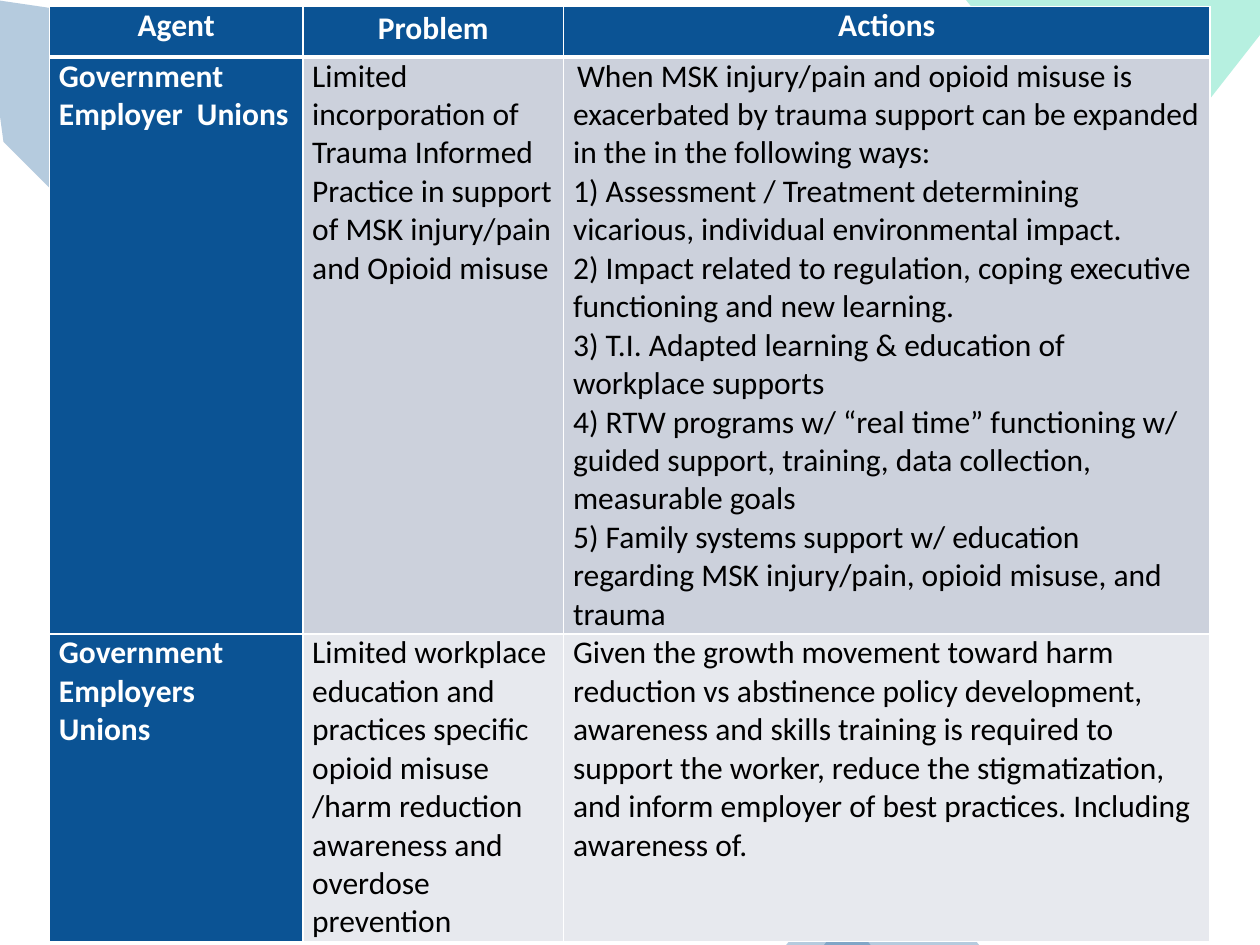
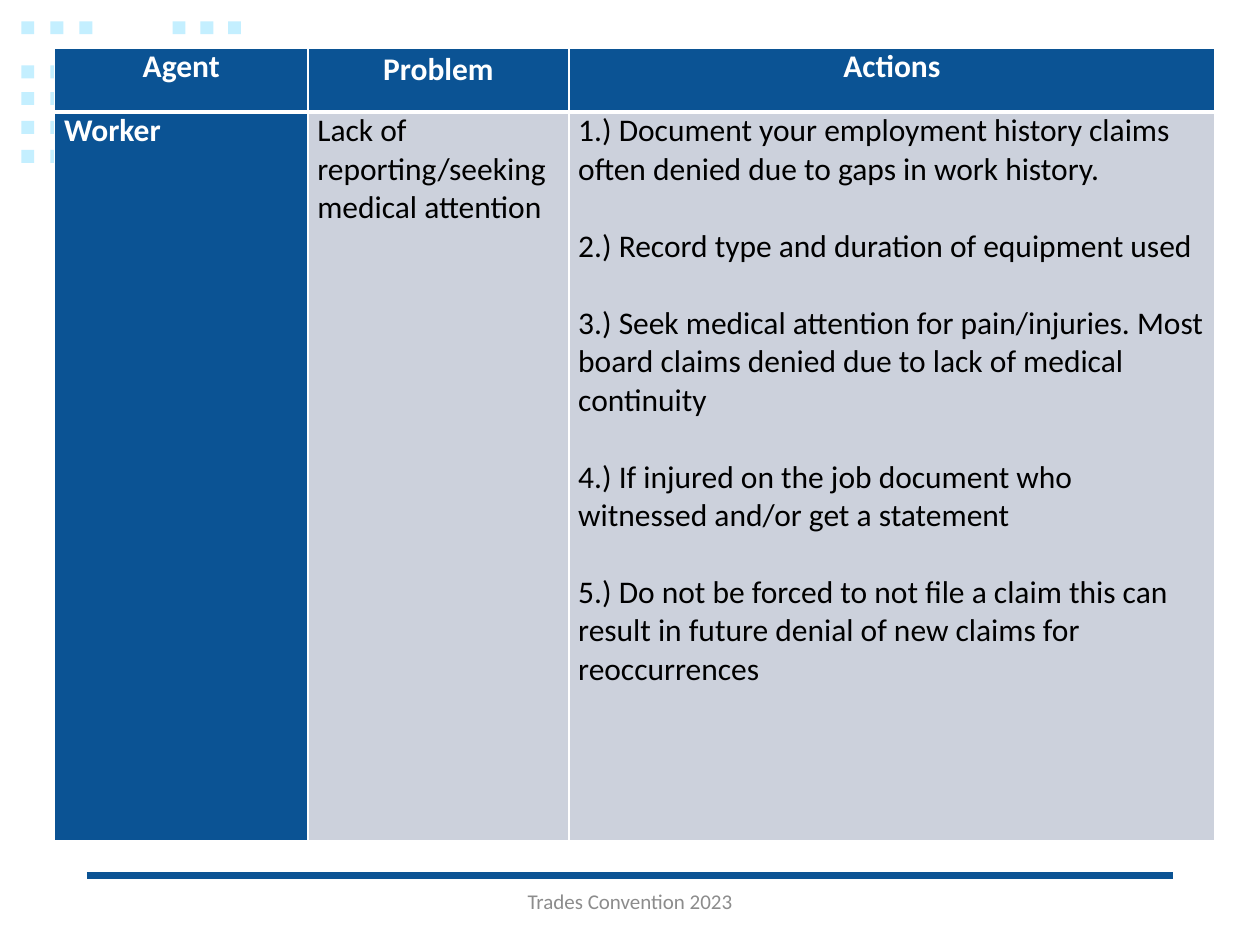
from lxml import etree
from pptx import Presentation
from pptx import util as u
from pptx.dml import color
from pptx.enum import shapes, text
from pptx.oxml import ns

COLORS = {
    "blue": "0B5394",
    "mint": "10CF9B",
    "sky": "C4EFFF",
    "band_dark": "CCD1DC",
    "band_light": "E7E9EE",
    "white": "FFFFFF",
    "black": "000000",
    "footer": "8C8C8C",
}
RGB = {name: color.RGBColor.from_string(value) for name, value in COLORS.items()}
FONT = "Calibri"
HEADINGS = ["Agent", "Problem", "Actions"]
COLUMN_WIDTHS = [144.75, 149.1, 369.3]


def paint(shape, fill, opacity=100):
    shape.shadow.inherit = False
    shape.line.fill.background()
    shape.fill.solid()
    shape.fill.fore_color.rgb = RGB[fill]
    if opacity < 100:
        tint = shape._element.spPr.find(".//" + ns.qn("a:srgbClr"))
        etree.SubElement(tint, ns.qn("a:alpha"), val=str(opacity * 1000))


def add_agent_table(slide, left, top, heights, body, gap=0):
    rows = [[[heading] for heading in HEADINGS]] + body
    table = slide.shapes.add_table(
        len(rows), len(HEADINGS), u.Pt(left), u.Pt(top),
        u.Pt(sum(COLUMN_WIDTHS)), u.Pt(sum(heights))).table
    table.first_col = True
    for column, width in zip(table.columns, COLUMN_WIDTHS):
        column.width = u.Pt(width)
    for r, (height, row) in enumerate(zip(heights, rows)):
        table.rows[r].height = u.Pt(height)
        for c, paragraphs in enumerate(row):
            strong = r == 0 or c == 0
            band = "band_dark" if r == 1 else "band_light"
            cell = table.cell(r, c)
            cell.margin_left = cell.margin_right = u.Pt(5.4)
            cell.margin_top = cell.margin_bottom = 0
            cell.fill.solid()
            cell.fill.fore_color.rgb = RGB["blue" if strong else band]

            borders = {"lnL": 1, "lnR": 1, "lnT": 3 if r == 1 else 1, "lnB": 3 if r == 0 else 1}
            properties = cell._tc.get_or_add_tcPr()
            for position, (side, width) in enumerate(borders.items()):
                border = etree.Element(ns.qn("a:" + side), w=str(u.Pt(width)))
                solid = etree.SubElement(border, ns.qn("a:solidFill"))
                etree.SubElement(solid, ns.qn("a:srgbClr"), val=COLORS["white"])
                properties.insert(position, border)

            frame = cell.text_frame
            for p, wording in enumerate(paragraphs):
                paragraph = frame.add_paragraph() if p else frame.paragraphs[0]
                if p and gap:
                    paragraph.space_before = u.Pt(gap)
                if r == 0:
                    paragraph.alignment = text.PP_ALIGN.CENTER
                    if c == 1:
                        paragraph.line_spacing = 1.07
                        paragraph.space_after = u.Pt(8)
                pieces = [(wording, 18)] if isinstance(wording, str) else wording
                for words, size in pieces:
                    run = paragraph.add_run()
                    run.text = words
                    run.font.name = FONT
                    run.font.size = u.Pt(size)
                    run.font.bold = strong
                    run.font.color.rgb = RGB["white" if strong else "black"]


prs = Presentation()
prs.slide_width = u.Pt(720)
prs.slide_height = u.Pt(540)
blank = prs.slide_layouts[6]

policy = prs.slides.add_slide(blank)

corners = [
    ("blue", [(86.4, 13), (-9.4, -0.7), (2.2, 80.6), (31.7, 110.9), (108, 34.6)]),
    ("mint", [(720, 0), (552.2, 0), (644.4, 116.6), (720, 20.2)]),
]
for fill, points in corners:
    outline = policy.shapes.build_freeform(*points[0], scale=u.Pt(1))
    outline.add_line_segments(points[1:], close=True)
    paint(outline.convert_to_shape(), fill, 30)

for left, top, width in [(470.9, 481.7, 88.6), (449.3, 508.3, 48.2)]:
    peak = policy.shapes.add_shape(
        shapes.MSO_SHAPE.ISOSCELES_TRIANGLE,
        u.Pt(left), u.Pt(top), u.Pt(width), u.Pt(540 - top))
    paint(peak, "blue", 30)

add_agent_table(policy, 28.3, 3.8, [28.8, 313.2, 125.3], [
    [
        ["Government Employer  Unions"],
        ["Limited incorporation of Trauma Informed Practice in support of MSK injury/pain "
         "and Opioid misuse"],
        [
            [(" ", 10),
             ("When MSK injury/pain and opioid misuse is exacerbated by trauma support can be "
              "expanded in the in the following ways:", 18)],
            "1) Assessment / Treatment determining vicarious, individual environmental impact.",
            "2) Impact related to regulation, coping executive functioning and new learning.",
            "3) T.I. Adapted learning & education of workplace supports",
            "4) RTW programs w/ “real time” functioning w/ guided support, training, "
            "data collection, measurable goals",
            "5) Family systems support w/ education regarding MSK injury/pain, opioid misuse, "
            "and trauma",
        ],
    ],
    [
        ["Government", "Employers", "Unions"],
        ["Limited workplace education and practices specific opioid misuse /harm reduction "
         "awareness and overdose prevention"],
        ["Given the growth movement toward harm reduction vs abstinence policy development, "
         "awareness and skills training is required to support the worker, reduce the "
         "stigmatization, and inform employer of best practices. Including awareness of."],
    ],
])

worker = prs.slides.add_slide(blank)

dot_rows = [(12.2, [12.2, 28.8, 45.4, 98.6, 114.5, 130.3])]
dot_rows += [(top, [12.2, 28.8]) for top in (37.4, 52.6, 69.1, 85.7)]
for top, lefts in dot_rows:
    for left in lefts:
        dot = worker.shapes.add_shape(
            shapes.MSO_SHAPE.RECTANGLE, u.Pt(left), u.Pt(top), u.Pt(7.4), u.Pt(7.4))
        paint(dot, "sky")

footer_rule = worker.shapes.add_connector(
    shapes.MSO_CONNECTOR.STRAIGHT, u.Pt(49.7), u.Pt(500.4), u.Pt(670.3), u.Pt(500.4))
footer_rule.line.color.rgb = RGB["blue"]
footer_rule.line.width = u.Pt(4)
etree.SubElement(footer_rule._element.spPr, ns.qn("a:effectLst"))

footer = worker.shapes.add_textbox(u.Pt(238.3), u.Pt(500.4), u.Pt(243.4), u.Pt(28.8)).text_frame
footer.word_wrap = True
footer.vertical_anchor = text.MSO_ANCHOR.MIDDLE
event = footer.paragraphs[0]
event.alignment = text.PP_ALIGN.CENTER
event.space_after = u.Pt(6)
event_name = event.add_run()
event_name.text = "Trades Convention 2023"
event_name.font.name = FONT
event_name.font.size = u.Pt(12)
event_name.font.color.rgb = RGB["footer"]

add_agent_table(worker, 31.2, 27.3, [36.7, 416.3], [
    [
        ["Worker"],
        ["Lack of reporting/seeking medical attention"],
        [
            "1.) Document your employment history claims often denied due to gaps in work history.",
            "2.) Record type and duration of equipment used",
            "3.) Seek medical attention for pain/injuries. Most board claims denied due to lack of "
            "medical continuity",
            "4.) If injured on the job document who witnessed and/or get a statement",
            "5.) Do not be forced to not file a claim this can result in future denial of new "
            "claims for reoccurrences",
        ],
    ],
], gap=22)

prs.save("out.pptx")
